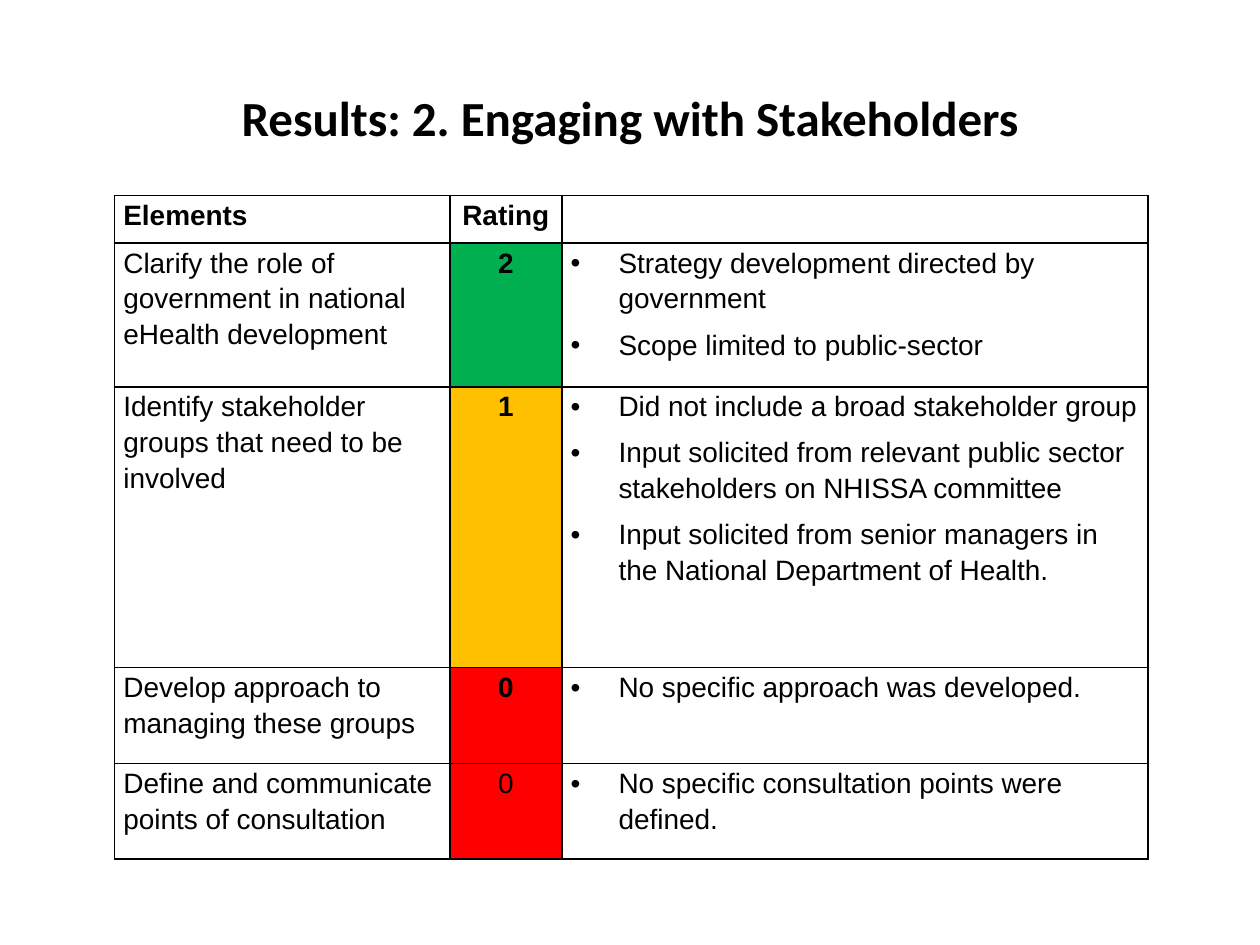
from pptx import Presentation
from pptx.dml.color import RGBColor
from pptx.enum.text import MSO_ANCHOR, PP_ALIGN
from pptx.util import Inches, Pt
from lxml.etree import SubElement
from pptx.oxml.ns import qn

HUES = {"ink": "000000", "paper": "FFFFFF", "good": "00B050", "fair": "FFC000", "poor": "FF0000"}


def write(frame, *lines, font="Arial", size=16, bold=False, align=PP_ALIGN.LEFT,
          gap=3, pitch=1.15, bullet=False):
    for i, line in enumerate(lines):
        para = frame.add_paragraph() if i else frame.paragraphs[0]
        para.alignment = align
        para.line_spacing = pitch
        para.space_before = para.space_after = Pt(gap)
        if bullet:
            props = para._p.get_or_add_pPr()
            props.set("marL", str(Inches(0.38)))
            props.set("indent", str(-Inches(0.38)))
            SubElement(props, qn("a:buFont"), typeface="Arial")
            SubElement(props, qn("a:buChar"), char="•")
        run = para.add_run()
        run.text = line
        run.font.name = font
        run.font.size = Pt(size)
        run.font.bold = bold
        run.font.color.rgb = RGBColor.from_string(HUES["ink"])


def style(cell, hue):
    cell.margin_left = cell.margin_right = Inches(0.07)
    cell.margin_top = cell.margin_bottom = 0
    props = cell._tc.get_or_add_tcPr()
    for side in ("lnL", "lnR", "lnT", "lnB"):
        edge = SubElement(props, qn("a:" + side), w=str(Pt(1)))
        fill = SubElement(edge, qn("a:solidFill"))
        SubElement(fill, qn("a:srgbClr"), val=HUES["ink"])
    cell.fill.solid()
    cell.fill.fore_color.rgb = RGBColor.from_string(HUES[hue])


deck = Presentation()
deck.slide_width, deck.slide_height = Inches(10), Inches(7.5)
slide = deck.slides.add_slide(deck.slide_layouts[5])

title = slide.shapes.title
title.left, title.top = Inches(0.5), Inches(0.3)
title.width, title.height = Inches(9), Inches(1.25)
title.text_frame.vertical_anchor = MSO_ANCHOR.MIDDLE
write(title.text_frame, "Results: 2. Engaging with Stakeholders", font="Calibri", size=28,
      bold=True, align=PP_ALIGN.CENTER, gap=0, pitch=1.0)

rows = [
    ("Elements", "Rating", "paper", True, []),
    ("Clarify the role of government in national eHealth development", "2", "good", True,
     ["Strategy development directed by government", "Scope limited to public-sector"]),
    ("Identify stakeholder groups that need to be involved", "1", "fair", True,
     ["Did not include a broad stakeholder group",
      "Input solicited from relevant public sector stakeholders on NHISSA committee",
      "Input solicited from senior managers in the National Department of Health."]),
    ("Develop approach to managing these groups", "0", "poor", True,
     ["No specific approach was developed."]),
    ("Define and communicate points of consultation", "0", "poor", False,
     ["No specific consultation points were defined."]),
]
widths = [2.66, 0.89, 4.65]
heights = [0.38, 1.14, 2.23, 0.76, 0.76]

table = slide.shapes.add_table(len(rows), len(widths), Inches(0.91), Inches(1.55),
                               Inches(sum(widths)), Inches(sum(heights))).table
table.first_row = table.horz_banding = False
for col, width in zip(table.columns, widths):
    col.width = Inches(width)

for i, (name, score, hue, bold, notes) in enumerate(rows):
    table.rows[i].height = Inches(heights[i])
    cells = table.rows[i].cells
    for cell, tint in zip(cells, ("paper", hue, "paper")):
        style(cell, tint)
    write(cells[0].text_frame, name, bold=i == 0)
    write(cells[1].text_frame, score, bold=bold, align=PP_ALIGN.CENTER)
    write(cells[2].text_frame, *notes, bullet=True)

deck.save("out.pptx")
